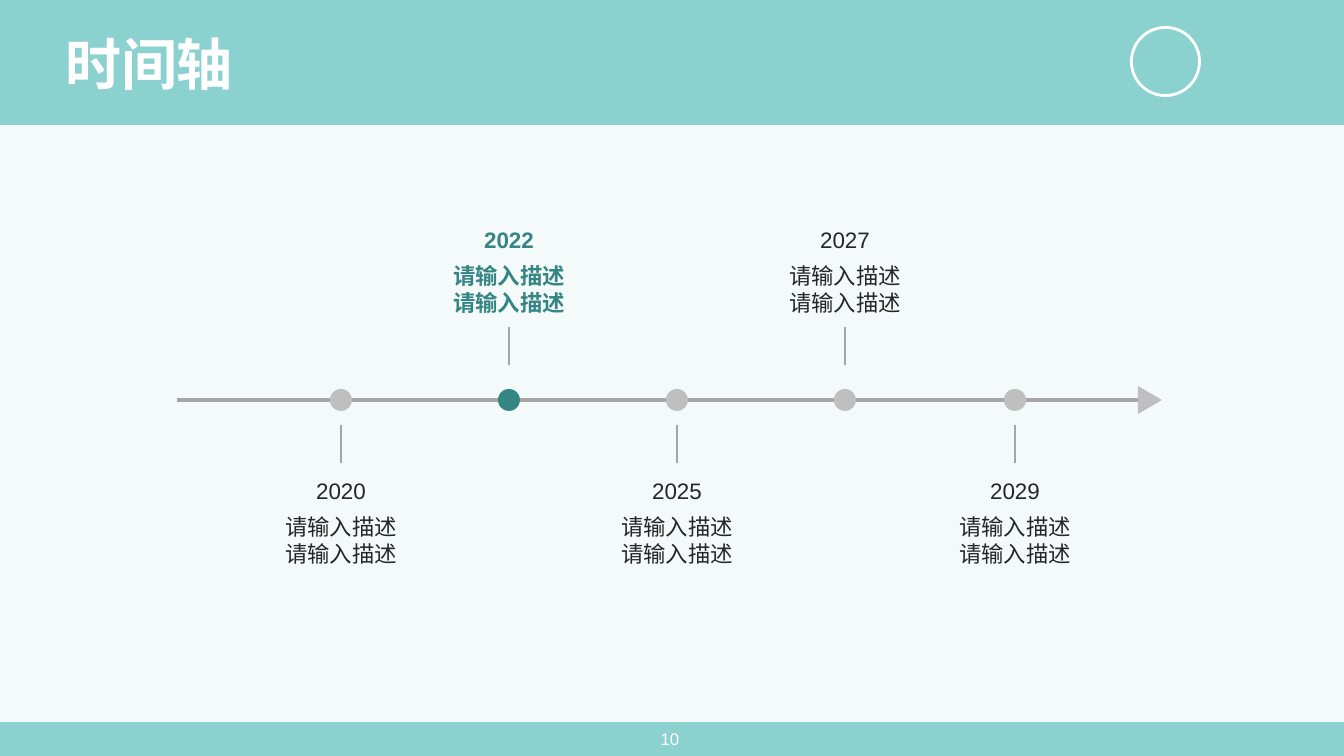
"""Build a timeline slide with five years set along an arrow."""
from dataclasses import dataclass

from lxml import etree
from pptx import Presentation
from pptx import util as u
from pptx.dml.color import RGBColor
from pptx.enum import shapes, text
from pptx.oxml.ns import qn

SCALE = 914400 / 100.8


@dataclass(frozen=True)
class Theme:
    """Colours, fonts and type sizes."""
    teal: str = "8BD1CF"
    deep: str = "358584"
    white: str = "FFFFFF"
    ink: str = "262626"
    dot: str = "BFBFBF"
    rule: str = "A6A6A6"
    latin: str = "Arial"
    asian: str = "Noto Sans CJK SC"
    head: int = 40
    body: int = 16
    foot: int = 12


def px(*nums):
    """Turn px into EMU."""
    return [u.Emu(round(n * SCALE)) for n in nums]


def write(frame, words, size, color, face, asian, bold=False, align=text.PP_ALIGN.CENTER,
          anchor=text.MSO_ANCHOR.TOP, space=None):
    """Fill a text frame, one paragraph a line."""
    frame.word_wrap = True
    frame.auto_size = text.MSO_AUTO_SIZE.NONE
    frame.vertical_anchor = anchor
    for i, line in enumerate(words.split("\n")):
        para = frame.paragraphs[0] if i == 0 else frame.add_paragraph()
        para.alignment = align
        if space:
            para.line_spacing = space
        run = para.add_run()
        run.text = line
        font = run.font
        font.size, font.bold, font.name = u.Pt(size), bold, face
        font.color.rgb = RGBColor.from_string(color)
        etree.SubElement(run._r.get_or_add_rPr(), qn("a:ea"), typeface=asian)


class Deck:
    """Hold the theme and the current slide."""

    def __init__(self, theme):
        """Open a deck with one titled slide."""
        self.theme = theme
        self.prs = Presentation()
        self.prs.slide_width, self.prs.slide_height = px(1344, 756)
        self.slide = self.prs.slides.add_slide(self.prs.slide_layouts[5])
        fill = self.slide.background.fill
        fill.solid()
        fill.fore_color.rgb = RGBColor.from_string(theme.teal)

    def title(self, words, x, y, w, h):
        """Place and format the title."""
        t, box = self.theme, self.slide.shapes.title
        box.left, box.top, box.width, box.height = px(x, y, w, h)
        write(box.text_frame, words, t.head, t.white, t.asian, t.asian, bold=True,
              align=text.PP_ALIGN.LEFT, anchor=text.MSO_ANCHOR.MIDDLE, space=0.9)

    def shape(self, kind, x, y, w, h, color, alpha=None, turn=0):
        """Draw a filled shape without an outline."""
        item = self.slide.shapes.add_shape(kind, *px(x, y, w, h))
        item.shadow.inherit = False
        item.line.fill.background()
        item.fill.solid()
        item.fill.fore_color.rgb = RGBColor.from_string(color)
        item.rotation = turn
        if alpha:
            tint = item.fill._xPr.find(qn("a:solidFill"))[0]
            etree.SubElement(tint, qn("a:alpha"), val=str(alpha * 1000))
        return item

    def line(self, x1, y1, x2, y2, width):
        """Draw a straight rule."""
        item = self.slide.shapes.add_connector(
            shapes.MSO_CONNECTOR.STRAIGHT, *px(x1, y1, x2, y2))
        item.line.width = u.Pt(width)
        item.line.color.rgb = RGBColor.from_string(self.theme.rule)
        etree.SubElement(item._element.spPr, qn("a:effectLst"))

    def label(self, words, mid, y, w, h, size, color, **form):
        """Add a text box centred on a given x."""
        box = self.slide.shapes.add_textbox(*px(mid - w / 2, y, w, h))
        write(box.text_frame, words, size, color, self.theme.latin, self.theme.asian, **form)

    def event(self, year, words, mid, above, key):
        """Add a dot, its stem and its words."""
        t = self.theme
        self.shape(shapes.MSO_SHAPE.OVAL, mid - 11, 389, 22, 22, t.deep if key else t.dot)
        stem, top = (327, 221) if above else (425, 472)
        self.line(mid, stem, mid, stem + 38, 1)
        color = t.deep if key else t.ink
        self.label(year, mid, top, 102, 37, t.body, color, bold=key)
        self.label(words, mid, top + 36, 156, 65, t.body, color, bold=key)


def main():
    """Build and save the slide."""
    theme = Theme()
    deck = Deck(theme)
    kinds = shapes.MSO_SHAPE
    deck.shape(kinds.RECTANGLE, 0, 125, 1344, 597, theme.white, alpha=91)
    ring = deck.shape(kinds.DONUT, 1130, 26, 71, 71, theme.white)
    ring.adjustments[0] = 0.04
    deck.title("时间轴", 55, 34, 722, 66)
    deck.label("10", 670, 723, 302, 32, theme.foot, theme.white,
               anchor=text.MSO_ANCHOR.MIDDLE)
    deck.line(177, 400, 1142, 400, 3)
    years = {"2020": 341, "2022": 509, "2025": 677, "2027": 845, "2029": 1015}
    for i, (year, mid) in enumerate(years.items()):
        deck.event(year, "请输入描述\n请输入描述", mid, above=i % 2 == 1, key=year == "2022")
    deck.shape(kinds.ISOSCELES_TRIANGLE, 1136, 388, 28, 24, theme.dot, turn=90)
    deck.prs.save("out.pptx")


if __name__ == "__main__":
    main()
